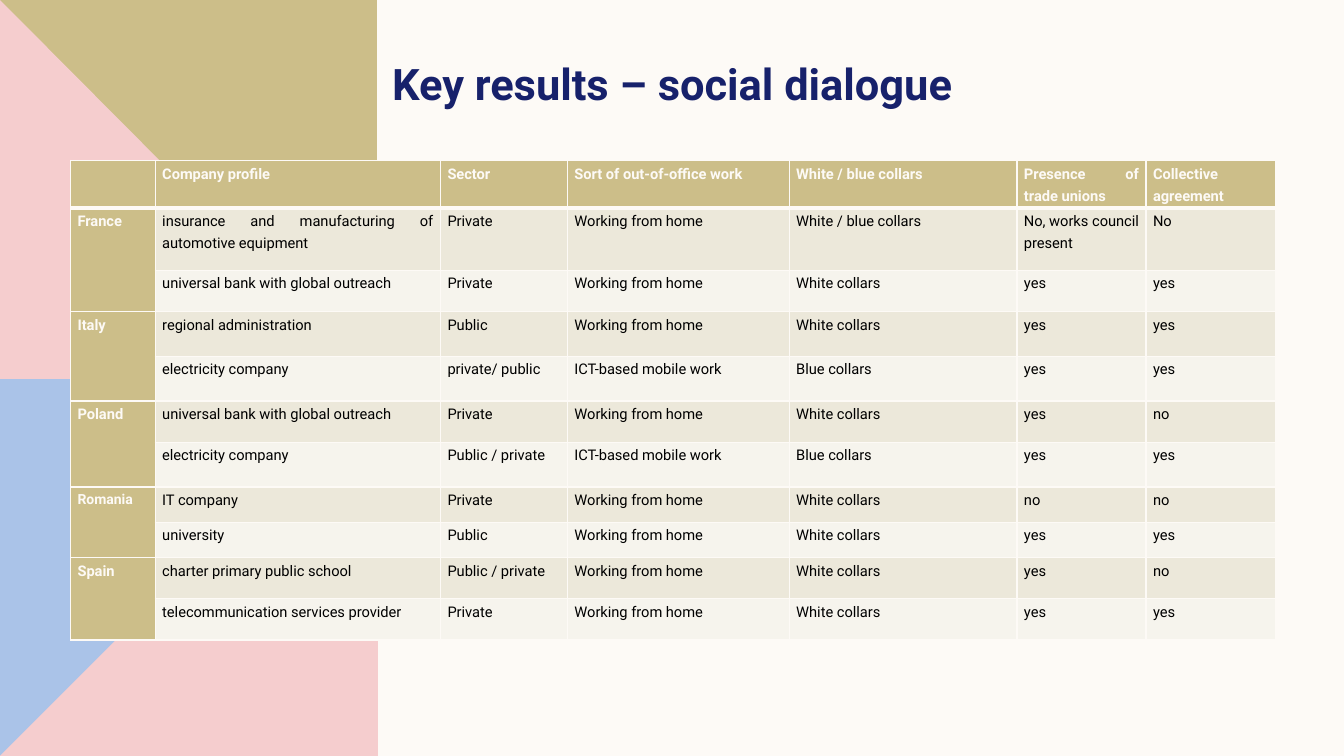
from dataclasses import dataclass
from typing import NamedTuple

from lxml.etree import SubElement
from pptx import Presentation
from pptx.dml.color import RGBColor
from pptx.enum.text import PP_ALIGN
from pptx.oxml.ns import qn
from pptx.slide import Slide
from pptx.table import _Cell
from pptx.text.text import _Paragraph
from pptx.util import Pt


@dataclass(frozen=True)
class Theme:
    font: str = "Roboto"
    paper: str = "FDFAF6"
    navy: str = "17216B"
    black: str = "000000"
    gold: str = "CCBE89"
    pink: str = "F5CDCE"
    blue: str = "AAC3E8"
    bands: tuple[str, str] = ("ECE8DA", "F6F4ED")
    title_size: float = 31
    cell_size: float = 10.5
    tight_size: float = 10


class Panel(NamedTuple):
    points: list[tuple[float, float]]
    color: str


class Company(NamedTuple):
    profile: str
    sector: str
    work: str
    collars: str
    unions: str
    agreement: str


class Country(NamedTuple):
    name: str
    companies: tuple[Company, Company]
    size: float


THEME = Theme()
HOME = "Working from home"
MOBILE = "ICT-based mobile work"
WHITE = "White collars"
BLUE = "Blue collars"
BANK = "universal bank with global outreach"
POWER = "electricity company"

PANELS = [
    Panel([(0, 270), (270, 270), (270, 540), (0, 540)], THEME.blue),
    Panel([(270, 270), (270, 540), (0, 540)], THEME.pink),
    Panel([(0, 0), (269.3, 0), (269.3, 270.7), (0, 270.7)], THEME.gold),
    Panel([(0, 0), (269.3, 270.7), (0, 270.7)], THEME.pink),
]
HEADERS = ["", "Company profile", "Sector", "Sort of out-of-office work",
           "White / blue collars", "Presence of trade unions", "Collective agreement"]
COUNTRIES = [
    Country("France", (
        Company("insurance and manufacturing of automotive equipment", "Private", HOME,
                "White / blue collars", "No, works council present", "No"),
        Company(BANK, "Private", HOME, WHITE, "yes", "yes"),
    ), THEME.cell_size),
    Country("Italy", (
        Company("regional administration", "Public", HOME, WHITE, "yes", "yes"),
        Company(POWER, "private/ public", MOBILE, BLUE, "yes", "yes"),
    ), THEME.cell_size),
    Country("Poland", (
        Company(BANK, "Private", HOME, WHITE, "yes", "no"),
        Company(POWER, "Public / private", MOBILE, BLUE, "yes", "yes"),
    ), THEME.cell_size),
    Country("Romania", (
        Company("IT company", "Private", HOME, WHITE, "no", "no"),
        Company("university", "Public", HOME, WHITE, "yes", "yes"),
    ), THEME.tight_size),
    Country("Spain", (
        Company("charter primary public school", "Public / private", HOME, WHITE, "yes", "no"),
        Company("telecommunication services provider", "Private", HOME, WHITE, "yes", "yes"),
    ), THEME.cell_size),
]
COL_WIDTHS = [60.5, 203.8, 90.7, 158.4, 162.7, 92.2, 92.2]
ROW_HEIGHTS = [34, 44.5, 29.5, 32, 32, 29.5, 32, 25.2, 25.2, 29.5, 29.5]


def style_text(p: _Paragraph, size: float, color: str, bold: bool) -> None:
    for font in [p.font, *(r.font for r in p.runs)]:
        font.name = THEME.font
        font.size = Pt(size)
        font.bold = bold
        font.color.rgb = RGBColor.from_string(color)


def draw_panel(s: Slide, panel: Panel) -> None:
    start, *rest = [(Pt(x), Pt(y)) for x, y in panel.points]
    builder = s.shapes.build_freeform(*start)
    builder.add_line_segments(rest, close=True)
    sp = builder.convert_to_shape()
    sp.shadow.inherit = False
    sp.fill.solid()
    sp.fill.fore_color.rgb = RGBColor.from_string(panel.color)
    sp.line.fill.background()


def draw_title(s: Slide, text: str) -> None:
    sp = s.shapes.add_textbox(Pt(48), Pt(35.3), Pt(864), Pt(48))
    tf = sp.text_frame
    tf.word_wrap = True
    tf.margin_top = Pt(5.6)
    tf.text = text
    p = tf.paragraphs[0]
    p.alignment = PP_ALIGN.CENTER
    style_text(p, THEME.title_size, THEME.navy, True)


def set_borders(cell: _Cell, top: float, bottom: float) -> None:
    tc_pr = cell._tc.get_or_add_tcPr()
    for side, width in (("L", 1), ("R", 1), ("T", top), ("B", bottom)):
        ln = SubElement(tc_pr, qn(f"a:ln{side}"), w=str(Pt(width)))
        fill = SubElement(ln, qn("a:solidFill"))
        SubElement(fill, qn("a:srgbClr"), val=THEME.paper)


def fill_cell(cell: _Cell, text: str, fill: str, color: str, bold: bool, size: float) -> None:
    cell.fill.solid()
    cell.fill.fore_color.rgb = RGBColor.from_string(fill)
    cell.margin_left = cell.margin_right = Pt(5)
    cell.margin_top = cell.margin_bottom = Pt(0)
    cell.text_frame.text = text
    p = cell.text_frame.paragraphs[0]
    p.alignment = PP_ALIGN.JUSTIFY
    p.line_spacing = 1.3
    style_text(p, size, color, bold)


def draw_table(s: Slide) -> None:
    frame = s.shapes.add_table(len(ROW_HEIGHTS), len(COL_WIDTHS), Pt(50.4), Pt(114.5),
                               Pt(sum(COL_WIDTHS)), Pt(sum(ROW_HEIGHTS)))
    table = frame.table
    table.horz_banding = False
    for column, width in zip(table.columns, COL_WIDTHS):
        column.width = Pt(width)
    for i, height in enumerate(ROW_HEIGHTS):
        table.rows[i].height = Pt(height)
        for j in range(len(COL_WIDTHS)):
            set_borders(table.cell(i, j), 3 if i == 1 else 1, 3 if i == 0 else 1)
    for j, header in enumerate(HEADERS):
        fill_cell(table.cell(0, j), header, THEME.gold, THEME.paper, True, THEME.cell_size)
    for k, country in enumerate(COUNTRIES):
        top = 1 + 2 * k
        for i, (company, band) in enumerate(zip(country.companies, THEME.bands), top):
            for j, value in enumerate(company, 1):
                fill_cell(table.cell(i, j), value, band, THEME.black, False, THEME.cell_size)
        table.cell(top, 0).merge(table.cell(top + 1, 0))
        fill_cell(table.cell(top, 0), country.name, THEME.gold, THEME.paper, True, country.size)


def main() -> None:
    prs = Presentation()
    prs.slide_width, prs.slide_height = Pt(960), Pt(540)
    s = prs.slides.add_slide(prs.slide_layouts[6])
    s.background.fill.solid()
    s.background.fill.fore_color.rgb = RGBColor.from_string(THEME.paper)
    for panel in PANELS:
        draw_panel(s, panel)
    draw_title(s, "Key results – social dialogue")
    draw_table(s)
    prs.save("out.pptx")


if __name__ == "__main__":
    main()
